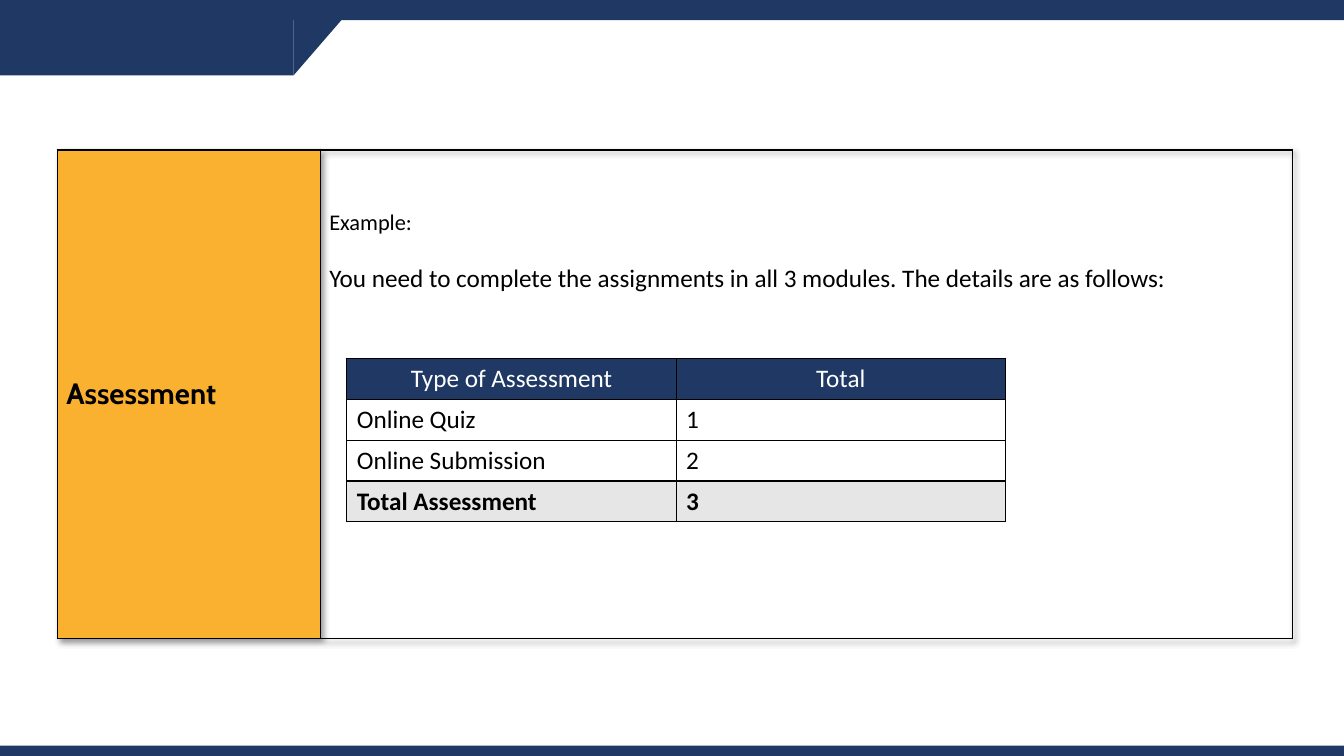
from lxml.etree import SubElement
from pptx import Presentation
from pptx.dml.color import RGBColor
from pptx.enum.shapes import MSO_SHAPE as SHAPE
from pptx.enum.text import MSO_ANCHOR as ANCHOR, PP_ALIGN as ALIGN
from pptx.oxml import parse_xml
from pptx.oxml.ns import nsdecls, qn
from pptx.util import Cm, Pt

NAVY, AMBER, GREY = "203864", "FAB12F", "E7E6E6"
BLACK, WHITE = "000000", "FFFFFF"
WIDTH, HEIGHT = 33.87, 19.05


def rgb(value):
    return RGBColor.from_string(value)


class SlideBuilder:
    font = "Calibri"

    def __init__(self, prs):
        self.slide = prs.slides.add_slide(prs.slide_layouts[6])

    def shape(self, kind, x, y, w, h, flip=False):
        sp = self.slide.shapes.add_shape(kind, Cm(x), Cm(y), Cm(w), Cm(h))
        sp.shadow.inherit = False
        sp.fill.solid()
        sp.fill.fore_color.rgb = rgb(NAVY)
        sp.line.fill.background()
        if flip:
            sp._element.spPr.get_or_add_xfrm().set("flipV", "1")

    def table(self, x, y, col_widths, row_heights):
        frame = self.slide.shapes.add_table(
            len(row_heights), len(col_widths), Cm(x), Cm(y),
            Cm(sum(col_widths)), Cm(sum(row_heights)))
        table = frame.table
        table.first_row = table.horz_banding = False
        for col, width in zip(table.columns, col_widths):
            col.width = Cm(width)
        for row, height in zip(table.rows, row_heights):
            row.height = Cm(height)
        return table

    def table_shadow(self, table):
        table._tbl.tblPr.insert(0, parse_xml(
            f'<a:effectLst {nsdecls("a")}>'
            '<a:outerShdw blurRad="50800" dist="38100" dir="2700000" algn="tl">'
            '<a:srgbClr val="000000"><a:alpha val="40000"/></a:srgbClr>'
            '</a:outerShdw></a:effectLst>'))

    def cell(self, cell, lines, borders=(1, 1, 1, 1), fill=None, color=BLACK,
             bold=False, font=None, align=ALIGN.LEFT, gap=0):
        for side, width in zip("LRTB", borders):
            ln = SubElement(cell._tc.get_or_add_tcPr(), qn(f"a:ln{side}"), w=str(Pt(width)))
            SubElement(SubElement(ln, qn("a:solidFill")), qn("a:srgbClr"), val=BLACK)
        if fill:
            cell.fill.solid()
            cell.fill.fore_color.rgb = rgb(fill)
        else:
            cell.fill.background()
        tf = cell.text_frame
        for i, (text, size) in enumerate(lines):
            p = tf.add_paragraph() if i else tf.paragraphs[0]
            p.text = text
            p.alignment = align
            if i:
                p.space_before = Pt(gap)
            for r in p.runs:
                r.font.name = font or self.font
                r.font.size = Pt(size)
                r.font.bold = bold
                r.font.color.rgb = rgb(color)


def main():
    prs = Presentation()
    prs.slide_width, prs.slide_height = Cm(WIDTH), Cm(HEIGHT)
    s = SlideBuilder(prs)

    s.shape(SHAPE.RECTANGLE, 0, 0, 7.4, 1.9)
    s.shape(SHAPE.RECTANGLE, 0, 0, WIDTH, 0.51)
    s.shape(SHAPE.RIGHT_TRIANGLE, 7.4, 0.26, 1.42, 1.64, flip=True)
    s.shape(SHAPE.RECTANGLE, 0, 18.79, WIDTH, 0.26)

    panel = s.table(1.45, 3.77, [6.63, 24.49], [12.32])
    s.table_shadow(panel)
    heading, details = panel.cell(0, 0), panel.cell(0, 1)
    for c in (heading, details):
        c.margin_left = c.margin_right = Cm(0.22)
        c.margin_top = c.margin_bottom = Cm(0.11)
    details.margin_top = Cm(1.49)
    heading.vertical_anchor = ANCHOR.MIDDLE
    s.cell(heading, [("Assessment", 21)], (1.5, 1, 1.5, 1.5), AMBER, bold=True, font="Cabin")
    s.cell(details, [
        ("Example:", 16),
        ("You need to complete the assignments in all 3 modules. "
         "The details are as follows:", 18),
    ], (1, 1.5, 1.5, 1.5), gap=19.5)

    rows = [
        ("Type of Assessment", "Total"),
        ("Online Quiz", "1"),
        ("Online Submission", "2"),
        ("Total Assessment", "3"),
    ]
    styles = {
        0: dict(fill=NAVY, color=WHITE, align=ALIGN.CENTER),
        len(rows) - 1: dict(fill=GREY, bold=True),
    }
    totals = s.table(8.74, 9.03, [8.3] * 2, [1.03] * len(rows))
    for i, row in enumerate(rows):
        for j, text in enumerate(row):
            s.cell(totals.cell(i, j), [(text, 18)], **styles.get(i, {}))

    prs.save("out.pptx")


if __name__ == "__main__":
    main()
